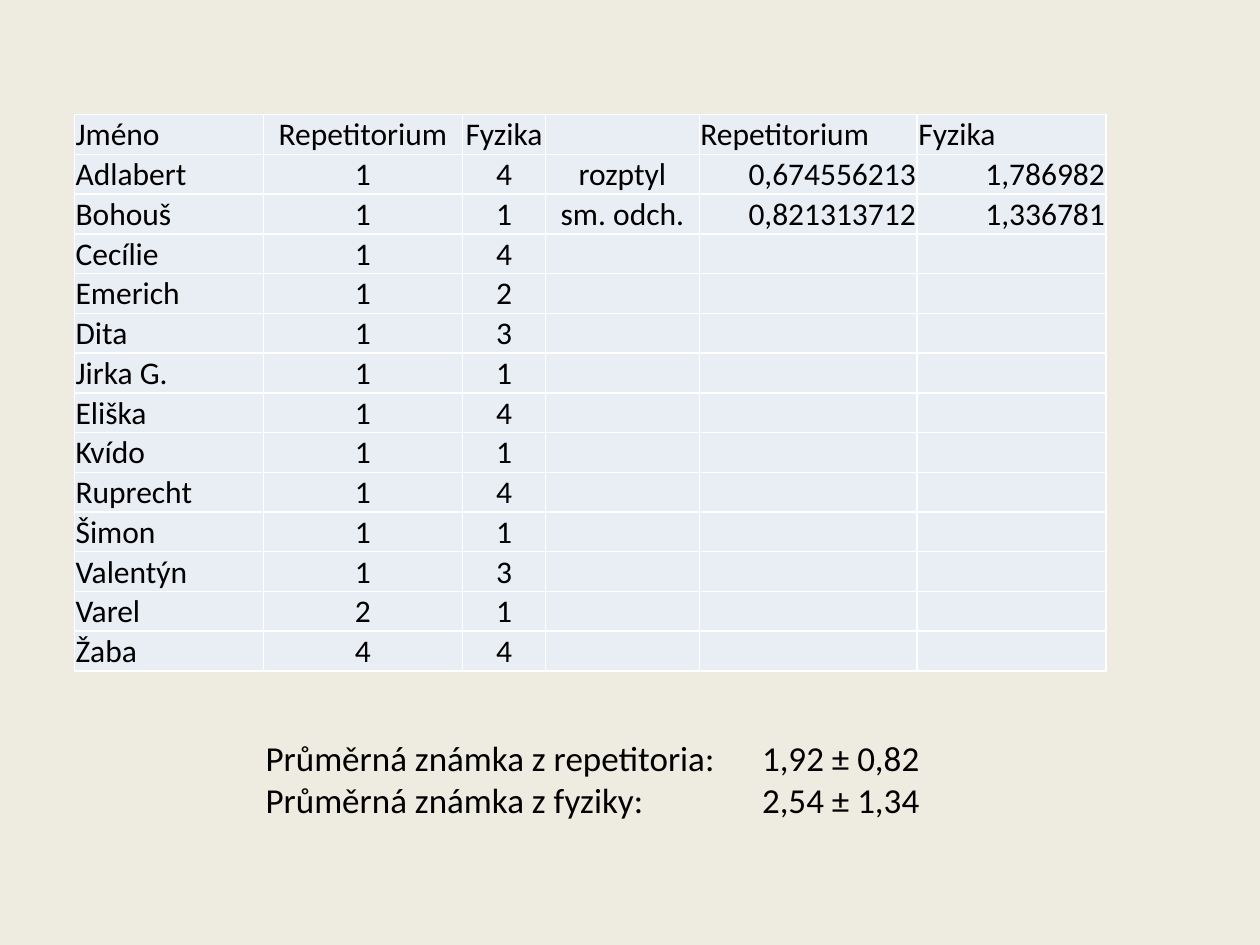
from lxml import etree
from pptx import Presentation
from pptx.dml.color import RGBColor
from pptx.enum.text import MSO_ANCHOR, PP_ALIGN
from pptx.oxml.ns import qn
from pptx.util import Inches, Pt

LEFT, CENTER, RIGHT = PP_ALIGN.LEFT, PP_ALIGN.CENTER, PP_ALIGN.RIGHT
BOTTOM = MSO_ANCHOR.BOTTOM

COLORS = {"background": "EEECE1", "cell": "E9EDF4", "border": "FFFFFF", "text": "000000"}
FONT = "Calibri"
SLIDE_WIDTH, SLIDE_HEIGHT = Inches(10), Inches(7.5)

COLUMN_WIDTHS = [1.5, 1.58, 0.66, 1.22, 1.73, 1.5]
ROW_HEIGHT = 0.31
HEADER_ALIGNMENTS = [LEFT, CENTER, CENTER, CENTER, LEFT, LEFT]
BODY_ALIGNMENTS = [LEFT, CENTER, CENTER, CENTER, RIGHT, RIGHT]
GRADES = [
    ["Jméno", "Repetitorium", "Fyzika", "", "Repetitorium", "Fyzika"],
    ["Adlabert", "1", "4", "rozptyl", "0,674556213", "1,786982"],
    ["Bohouš", "1", "1", "sm. odch.", "0,821313712", "1,336781"],
    ["Cecílie", "1", "4"],
    ["Emerich", "1", "2"],
    ["Dita", "1", "3"],
    ["Jirka G.", "1", "1"],
    ["Eliška", "1", "4"],
    ["Kvído", "1", "1"],
    ["Ruprecht", "1", "4"],
    ["Šimon", "1", "1"],
    ["Valentýn", "1", "3"],
    ["Varel", "2", "1"],
    ["Žaba", "4", "4"],
]
AVERAGES = [
    ("Průměrná známka z repetitoria:", "1,92 ± 0,82"),
    ("Průměrná známka z fyziky:", "2,54 ± 1,34"),
]


def color(name):
    return RGBColor.from_string(COLORS[name])


def style_paragraph(paragraph, size, alignment=LEFT):
    paragraph.alignment = alignment
    paragraph.font.name = FONT
    paragraph.font.size = Pt(size)
    paragraph.font.color.rgb = color("text")


def add_borders(cell):
    properties = cell._tc.get_or_add_tcPr()
    for index, side in enumerate(("a:lnL", "a:lnR", "a:lnT", "a:lnB")):
        line = etree.Element(qn(side), w=str(Pt(1)))
        fill = etree.SubElement(line, qn("a:solidFill"))
        etree.SubElement(fill, qn("a:srgbClr"), val=COLORS["border"])
        properties.insert(index, line)


def fill_cell(cell, text, alignment):
    cell.margin_left = cell.margin_right = cell.margin_top = Inches(0.01)
    cell.margin_bottom = 0
    cell.vertical_anchor = BOTTOM
    cell.fill.solid()
    cell.fill.fore_color.rgb = color("cell")
    add_borders(cell)
    cell.text = text
    style_paragraph(cell.text_frame.paragraphs[0], 18, alignment)


def add_grade_table(slide, left, top):
    table = slide.shapes.add_table(
        len(GRADES), len(COLUMN_WIDTHS), left, top,
        Inches(sum(COLUMN_WIDTHS)), Inches(ROW_HEIGHT * len(GRADES))).table
    table.first_row = table.horz_banding = False
    for column, width in zip(table.columns, COLUMN_WIDTHS):
        column.width = Inches(width)
    for row_index, values in enumerate(GRADES):
        row = table.rows[row_index]
        row.height = Inches(ROW_HEIGHT)
        alignments = BODY_ALIGNMENTS if row_index else HEADER_ALIGNMENTS
        padded = values + [""] * (len(COLUMN_WIDTHS) - len(values))
        for cell, text, alignment in zip(row.cells, padded, alignments):
            fill_cell(cell, text, alignment)


def add_tab_stop(paragraph, position):
    tabs = etree.Element(qn("a:tabLst"))
    etree.SubElement(tabs, qn("a:tab"), pos=str(position), algn="l")
    paragraph._p.get_or_add_pPr().insert(0, tabs)


def add_averages(slide, left, top, width, height):
    """Write one line per subject, with the values lined up at a tab stop."""
    frame = slide.shapes.add_textbox(left, top, width, height).text_frame
    frame.word_wrap = True
    for index, (label, value) in enumerate(AVERAGES):
        paragraph = frame.add_paragraph() if index else frame.paragraphs[0]
        paragraph.add_run().text = f"{label}\t{value}"
        style_paragraph(paragraph, 20)
        add_tab_stop(paragraph, Inches(3.94))


def main():
    presentation = Presentation()
    presentation.slide_width, presentation.slide_height = SLIDE_WIDTH, SLIDE_HEIGHT
    slide = presentation.slides.add_slide(presentation.slide_layouts[6])
    slide.background.fill.solid()
    slide.background.fill.fore_color.rgb = color("background")
    add_grade_table(slide, Inches(0.59), Inches(0.91))
    add_averages(slide, Inches(2.01), Inches(5.8), Inches(5.44), Inches(0.77))
    presentation.save("out.pptx")


if __name__ == "__main__":
    main()
